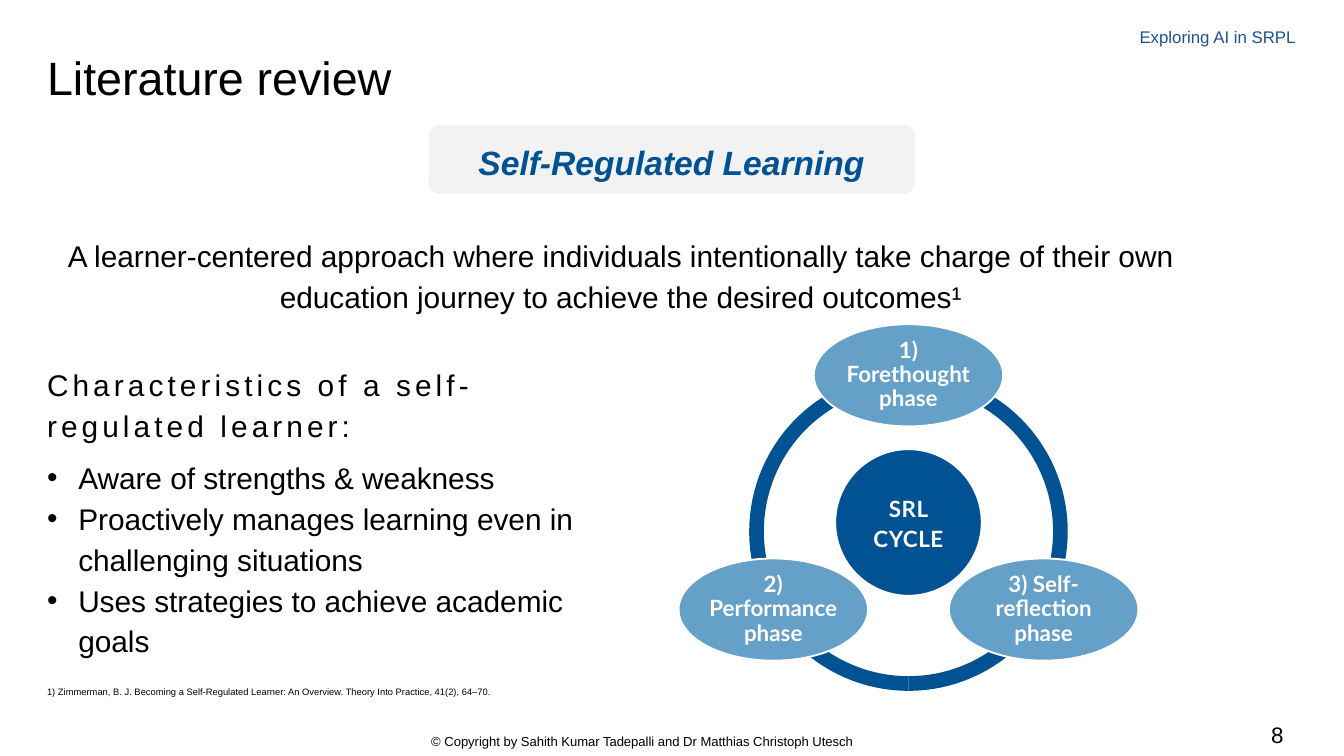
from math import cos, radians, sin

from lxml.etree import SubElement
from pptx import Presentation
from pptx.dml.color import RGBColor as RGB
from pptx.enum.shapes import MSO_SHAPE as Kind
from pptx.enum.text import MSO_ANCHOR as Anchor, PP_ALIGN as Align
from pptx.oxml.ns import qn
from pptx.util import Cm, Pt

HUES = {"navy": "005293", "sky": "64A0C8", "pale": "F2F2F2",
        "head": "21518E", "ink": "000000", "white": "FFFFFF"}

# Content: text, box in cm (left, top, width, height), format
TEXTS = [
    (["Exploring AI in SRPL"], (20.29, 0.43, 5.44, 0.53),
     dict(size=9, hue="head", align=Align.CENTER, anchor=Anchor.MIDDLE)),
    (["Literature review"], (0.89, 0.86, 23.65, 1.04),
     dict(size=25, lead=Pt(32))),
    (["A learner-centered approach where individuals intentionally take "
      "charge of their own education journey to achieve the desired outcomes¹"],
     (0.89, 4.39, 21.69, 1.5), dict(size=16, lead=1.14, align=Align.CENTER)),
    (["Characteristics of a self-regulated learner:"],
     (0.89, 6.83, 8.56, 1.5), dict(size=16, lead=1.14, track=220)),
    (["Aware of strengths & weakness",
      "Proactively manages learning even in challenging situations",
      "Uses strategies to achieve academic goals"],
     (0.89, 8.59, 10.67, 4.62), dict(size=16, lead=1.14, bullet="•")),
    (["1) Zimmerman, B. J. Becoming a Self-Regulated Learner: An Overview. "
      "Theory Into Practice, 41(2), 64–70."],
     (0.89, 12.93, 16.43, 0.23), dict(size=5, lead=1.14)),
    (["© Copyright by Sahith Kumar Tadepalli and Dr Matthias Christoph Utesch"],
     (2.29, 13.62, 19.69, 0.76),
     dict(size=7, align=Align.CENTER, anchor=Anchor.MIDDLE)),
    (["8"], (18.82, 13.49, 5.69, 0.76),
     dict(size=12, align=Align.RIGHT, pad=(0.25, 0.13))),
]
TOPIC = "Self-Regulated Learning"
HUB = "SRL CYCLE"
PHASES = ["1) Forethought phase", "3) Self-reflection phase",
          "2) Performance phase"]

# Cycle geometry in cm
MID_X, MID_Y = 17.17, 10.04
RING, ORBIT = 6.02, 2.95
HUB_Y, HUB_D = 9.87, 2.77
NODE_W, NODE_H = 3.58, 1.93
ARCS = [(90, 162), (18, 90), (162, 18)]

deck = Presentation()
deck.slide_width, deck.slide_height = Cm(25.4), Cm(14.28)
slide = deck.slides.add_slide(deck.slide_layouts[6])


def write(shape, lines, size=12, hue="ink", face="Arial", bold=False,
          slant=False, align=Align.LEFT, anchor=Anchor.TOP, lead=None,
          track=None, bullet=None, pad=(0, 0)):
    frame = shape.text_frame
    frame.word_wrap = True
    frame.vertical_anchor = anchor
    frame.margin_left = frame.margin_right = Cm(pad[0])
    frame.margin_top = frame.margin_bottom = Cm(pad[1])
    for i, line in enumerate(lines):
        para = frame.add_paragraph() if i else frame.paragraphs[0]
        para.alignment = align
        if lead:
            para.line_spacing = lead
        if bullet:
            props = para._p.get_or_add_pPr()
            props.set("marL", str(Cm(0.59)))
            props.set("indent", str(-Cm(0.59)))
            SubElement(props, qn("a:buFont")).set("typeface", "Arial")
            SubElement(props, qn("a:buChar")).set("char", bullet)
        run = para.add_run()
        run.text = line
        font = run.font
        font.name, font.size, font.bold, font.italic = face, Pt(size), bold, slant
        font.color.rgb = RGB.from_string(HUES[hue])
        if track:
            run._r.get_or_add_rPr().set("spc", str(track))


def draw(kind, box, hue, edge=None):
    shape = slide.shapes.add_shape(kind, *map(Cm, box))
    shape.shadow.inherit = False
    shape.fill.solid()
    shape.fill.fore_color.rgb = RGB.from_string(HUES[hue])
    if edge:
        shape.line.color.rgb = RGB.from_string(HUES[edge])
        shape.line.width = Pt(1)
    else:
        shape.line.fill.background()
    return shape


def around(x, y, w, h):
    return x - w / 2, y - h / 2, w, h


# Topic banner
banner = draw(Kind.ROUNDED_RECTANGLE, (8.1, 2.36, 9.19, 1.3), "pale")
write(banner, [TOPIC], size=18, hue="navy", bold=True, slant=True,
      align=Align.CENTER, anchor=Anchor.MIDDLE, lead=1.14, pad=(0.18, 0.1))

# Ring: angles are stored in 60000ths of a degree, adjustments in 100000ths
for start, end in ARCS:
    arc = draw(Kind.BLOCK_ARC, around(MID_X, MID_Y, RING, RING), "navy")
    for i, value in enumerate((start * 0.6, end * 0.6, 0.046)):
        arc.adjustments[i] = value

# Hub and phases
label = dict(size=12, hue="white", face="Lato", bold=True,
             align=Align.CENTER, anchor=Anchor.MIDDLE, pad=(0.04, 0.04))
hub = draw(Kind.OVAL, around(MID_X, HUB_Y, HUB_D, HUB_D), "navy", "white")
write(hub, [HUB], lead=Pt(16), track=30, **label)
for i, phase in enumerate(PHASES):
    turn = radians(360 / len(PHASES) * i - 90)
    x, y = MID_X + ORBIT * cos(turn), MID_Y + ORBIT * sin(turn)
    node = draw(Kind.OVAL, around(x, y, NODE_W, NODE_H), "sky", "white")
    write(node, [phase], lead=0.9, **label)

# Text boxes
for lines, box, form in TEXTS:
    write(slide.shapes.add_textbox(*map(Cm, box)), lines, **form)

deck.save("out.pptx")
